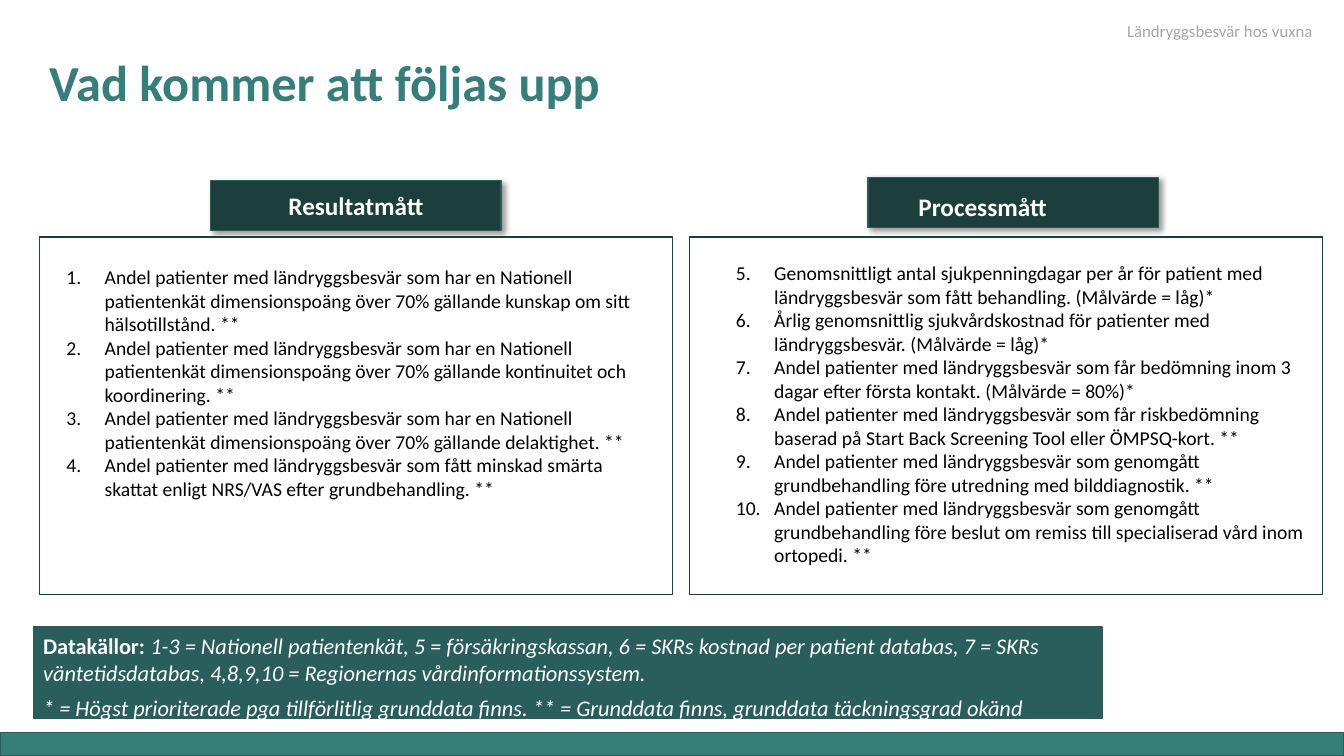
"""Build the follow-up measures slide for low back pain in adults."""
from lxml.etree import SubElement
from pptx import Presentation
from pptx.dml.color import RGBColor
from pptx.enum.shapes import MSO_SHAPE
from pptx.enum.text import MSO_ANCHOR, PP_ALIGN
from pptx.oxml.ns import qn
from pptx.util import Inches, Pt

COLOURS = {
    "teal": "377D7A",
    "edge": "295C5A",
    "source": "295E5C",
    "dark": "1C3E3D",
    "white": "FFFFFF",
    "black": "000000",
    "grey": "A6A6A6",
}
FONT = "Calibri"
PANEL_TOP, PANEL_WIDTH, PANEL_HEIGHT = 2.35, 6.28, 3.55
LABEL_WIDTH, LABEL_HEIGHT = 2.88, 0.5
LIST_INDENT = 0.38

PATIENTS = "Andel patienter med ländryggsbesvär som "
SURVEY = PATIENTS + "har en Nationell patientenkät dimensionspoäng över 70% gällande "
RESULT_MEASURES = [
    SURVEY + "kunskap om sitt hälsotillstånd. **",
    SURVEY + "kontinuitet och koordinering. **",
    SURVEY + "delaktighet. **",
    PATIENTS + "fått minskad smärta skattat enligt NRS/VAS efter grundbehandling. **",
]
PROCESS_MEASURES = [
    "Genomsnittligt antal sjukpenningdagar per år för patient med "
    "ländryggsbesvär som fått behandling. (Målvärde = låg)*",
    "Årlig genomsnittlig sjukvårdskostnad för patienter med "
    "ländryggsbesvär. (Målvärde = låg)*",
    PATIENTS + "får bedömning inom 3 dagar efter första kontakt. (Målvärde = 80%)*",
    PATIENTS + "får riskbedömning baserad på Start Back Screening Tool eller ÖMPSQ-kort. **",
    PATIENTS + "genomgått grundbehandling före utredning med bilddiagnostik. **",
    PATIENTS + "genomgått grundbehandling före beslut om remiss till "
    "specialiserad vård inom ortopedi. **",
]
SOURCES = (
    "1-3 = Nationell patientenkät, 5 = försäkringskassan, "
    "6 = SKRs kostnad per patient databas, 7 = SKRs väntetidsdatabas, "
    "4,8,9,10 = Regionernas vårdinformationssystem."
)
LEGEND = (
    "* = Högst prioriterade pga tillförlitlig grunddata finns. "
    "** = Grunddata finns, grunddata täckningsgrad okänd"
)


def colour(name):
    """Return the named colour."""
    return RGBColor.from_string(COLOURS[name])


def add_run(paragraph, text, size, colour_name, bold=False, italic=False):
    """Append one formatted run to a paragraph."""
    run = paragraph.add_run()
    run.text = text
    run.font.name = FONT
    run.font.size = Pt(size)
    run.font.bold = bold
    run.font.italic = italic
    run.font.color.rgb = colour(colour_name)


def add_box(slide, left, top, width, height, fill, line):
    """Add a flat outlined rectangle."""
    shape = slide.shapes.add_shape(
        MSO_SHAPE.RECTANGLE, Inches(left), Inches(top), Inches(width), Inches(height)
    )
    shape.shadow.inherit = False
    shape.fill.solid()
    shape.fill.fore_color.rgb = colour(fill)
    shape.line.color.rgb = colour(line)
    shape.line.width = Pt(1)
    return shape


def add_shadow(shape):
    """Give a shape a soft shadow towards the lower right."""
    effects = shape._element.spPr.find(qn("a:effectLst"))
    shadow = SubElement(
        effects, qn("a:outerShdw"), blurRad=str(Pt(4)), dist=str(Pt(3)),
        dir="2700000", algn="tl", rotWithShape="0",
    )
    tint = SubElement(shadow, qn("a:srgbClr"), val=COLOURS["black"])
    SubElement(tint, qn("a:alpha"), val="40000")


def add_text(slide, left, top, width, height, lines, size, colour_name,
             bold=False, anchor=MSO_ANCHOR.TOP, align=PP_ALIGN.LEFT, spacing=None):
    """Add a text box with one paragraph per line and return its paragraphs."""
    box = slide.shapes.add_textbox(
        Inches(left), Inches(top), Inches(width), Inches(height)
    )
    frame = box.text_frame
    frame.word_wrap = True
    frame.vertical_anchor = anchor
    for index, line in enumerate(lines):
        paragraph = frame.add_paragraph() if index else frame.paragraphs[0]
        paragraph.alignment = align
        paragraph.line_spacing = spacing
        add_run(paragraph, line, size, colour_name, bold)
    return frame.paragraphs


def add_numbered_list(slide, left, top, height, measures, start):
    """Add an automatically numbered list of measures."""
    paragraphs = add_text(slide, left, top, 5.92, height, measures, 14, "black")
    for paragraph in paragraphs:
        properties = paragraph._p.get_or_add_pPr()
        properties.set("marL", str(Inches(LIST_INDENT)))
        properties.set("indent", str(-Inches(LIST_INDENT)))
        SubElement(properties, qn("a:buFont"), typeface="+mj-lt")
        SubElement(properties, qn("a:buAutoNum"), type="arabicPeriod", startAt=str(start))


def add_heading(slide, text, label_left, label_top, left, top, width, height):
    """Add a shadowed label and its centred heading."""
    label = add_box(slide, label_left, label_top, LABEL_WIDTH, LABEL_HEIGHT, "dark", "edge")
    add_shadow(label)
    paragraphs = add_text(slide, left, top, width, height, [text], 18, "white", True,
                          MSO_ANCHOR.MIDDLE, PP_ALIGN.CENTER)
    paragraphs[0].space_after = Pt(24)


def add_sources(slide):
    """Add the box that names the data sources."""
    box = add_box(slide, 0.33, 6.22, 10.6, 0.91, "source", "edge")
    frame = box.text_frame
    frame.word_wrap = True
    frame.vertical_anchor = MSO_ANCHOR.TOP
    sources = frame.paragraphs[0]
    add_run(sources, "Datakällor: ", 16, "white", bold=True)
    add_run(sources, SOURCES, 16, "white", italic=True)
    legend = frame.add_paragraph()
    legend.space_before = Pt(6)
    add_run(legend, LEGEND, 16, "white", italic=True)
    for paragraph in frame.paragraphs:
        paragraph.alignment = PP_ALIGN.LEFT


def main():
    """Build and save the slide."""
    presentation = Presentation()
    presentation.slide_width = Inches(13.33)
    presentation.slide_height = Inches(7.5)
    slide = presentation.slides.add_slide(presentation.slide_layouts[6])

    add_box(slide, 0, 7.27, 13.33, 0.23, "teal", "edge")
    add_text(slide, 0.39, 0.49, 10, 0.67, ["Vad kommer att följas upp"], 36, "teal",
             True, MSO_ANCHOR.BOTTOM, spacing=0.9)
    add_heading(slide, "Resultatmått", 2.09, 1.79, 0.39, 1.76, 6.28, 0.55)
    add_heading(slide, "Processmått", 8.61, 1.76, 6.77, 1.72, 5.95, 0.66)
    add_sources(slide)
    for left in (0.39, 6.84):
        add_box(slide, left, PANEL_TOP, PANEL_WIDTH, PANEL_HEIGHT, "white", "dark")
    add_numbered_list(slide, 0.56, 2.58, 2.69, RESULT_MEASURES, 1)
    add_numbered_list(slide, 7.2, 2.54, 3.4, PROCESS_MEASURES, 5)
    add_text(slide, 11.08, 0.16, 2.06, 0.3, ["Ländryggsbesvär hos vuxna"], 12, "grey")

    presentation.save("out.pptx")


if __name__ == "__main__":
    main()
